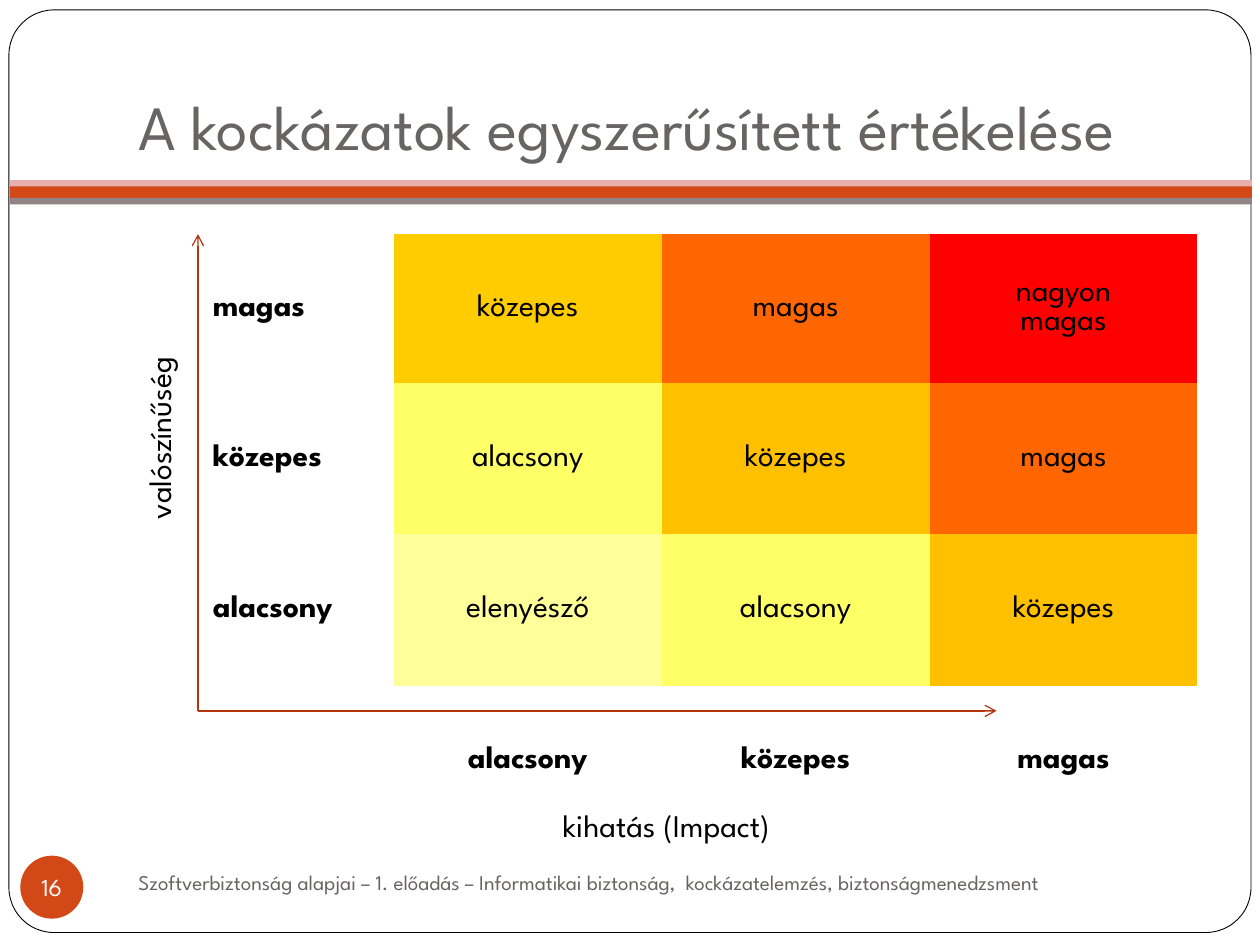
from pptx import Presentation
from pptx.dml.color import RGBColor
from pptx.enum.shapes import MSO_CONNECTOR, MSO_SHAPE as Shape
from pptx.enum.text import MSO_ANCHOR as Anchor, PP_ALIGN as Align
from pptx.oxml.ns import qn
from pptx.util import Cm, Pt
from lxml import etree

BLACK = RGBColor(0x00, 0x00, 0x00)
WHITE = RGBColor(0xFF, 0xFF, 0xFF)
GREY = RGBColor(0x69, 0x64, 0x64)
ORANGE = RGBColor(0xD3, 0x48, 0x17)
PINK = RGBColor(0xE6, 0xB1, 0xAC)
MAUVE = RGBColor(0x91, 0x84, 0x85)
RUST = RGBColor(0xB1, 0x36, 0x0B)
PALE = RGBColor(0xFF, 0xFF, 0x99)
YELLOW = RGBColor(0xFF, 0xFF, 0x66)
GOLD = RGBColor(0xFF, 0xCC, 0x00)
AMBER = RGBColor(0xFF, 0xC0, 0x00)
DEEP = RGBColor(0xFF, 0x66, 0x00)
RED = RGBColor(0xFF, 0x00, 0x00)

NO_GRID_STYLE = "{2D5ABB26-0587-4C30-8999-92F81FD0307C}"

# Each cell: text, fill; the first column and the last row hold the labels
RISKS = [
    [("magas", None), ("közepes", GOLD), ("magas", DEEP), ("nagyon\nmagas", RED)],
    [("közepes", None), ("alacsony", YELLOW), ("közepes", AMBER), ("magas", DEEP)],
    [("alacsony", None), ("elenyésző", PALE), ("alacsony", YELLOW), ("közepes", AMBER)],
    [("", WHITE), ("alacsony", WHITE), ("közepes", WHITE), ("magas", WHITE)],
]


class RiskSlide:
    font = "League Spartan"

    def __init__(self, deck):
        self.page = deck.slides.add_slide(deck.slide_layouts[5])

    def add_lines(self, frame, text, size=18, color=BLACK, bold=False, align=Align.LEFT):
        for index, line in enumerate(text.split("\n")):
            para = frame.paragraphs[0] if index == 0 else frame.add_paragraph()
            para.alignment = align
            span = para.add_run()
            span.text = line
            span.font.name = self.font
            span.font.size = Pt(size)
            span.font.bold = bold
            span.font.color.rgb = color

    def shape(self, kind, left, top, width, height, fill, line=None):
        shape = self.page.shapes.add_shape(kind, Cm(left), Cm(top), Cm(width), Cm(height))
        shape.shadow.inherit = False
        shape.fill.solid()
        shape.fill.fore_color.rgb = fill
        if line is None:
            shape.line.fill.background()
        else:
            shape.line.color.rgb = line
            shape.line.width = Pt(0.5)
        return shape

    def title(self, text, left, top, width, height):
        title = self.page.shapes.title
        title.left, title.top, title.width, title.height = map(Cm, (left, top, width, height))
        frame = title.text_frame
        frame.vertical_anchor = Anchor.BOTTOM
        frame.margin_bottom = Cm(0.25)
        self.add_lines(frame, text, 36, GREY)
        self.page.shapes._spTree.append(title._element)  # in front of the frame

    def badge(self, text, left, top, size):
        frame = self.shape(Shape.OVAL, left, top, size, size, ORANGE).text_frame
        frame.margin_left = frame.margin_right = frame.margin_top = frame.margin_bottom = 0
        frame.word_wrap = False
        frame.vertical_anchor = Anchor.MIDDLE
        self.add_lines(frame, text, 14, WHITE, align=Align.CENTER)

    def text(self, text, left, top, width, height, size=18, color=BLACK,
             anchor=Anchor.TOP, upward=False):
        box = self.page.shapes.add_textbox(Cm(left), Cm(top), Cm(width), Cm(height))
        frame = box.text_frame
        frame.word_wrap = True
        frame.vertical_anchor = anchor
        if upward:
            frame._txBody.bodyPr.set("vert", "vert270")
        self.add_lines(frame, text, size, color)

    def matrix(self, rows, left, top, column_width, heights):
        columns = len(rows[0])
        table = self.page.shapes.add_table(
            len(rows), columns, Cm(left), Cm(top),
            Cm(column_width * columns), Cm(sum(heights))).table
        table.first_row = table.horz_banding = False
        table._tbl.tblPr.find(qn("a:tableStyleId")).text = NO_GRID_STYLE
        for column in table.columns:
            column.width = Cm(column_width)
        for r, (row, height) in enumerate(zip(rows, heights)):
            table.rows[r].height = Cm(height)
            for c, (text, fill) in enumerate(row):
                self.cell(table.cell(r, c), text, fill, c == 0, r == len(rows) - 1)

    def cell(self, cell, text, fill, row_label, column_label):
        if fill is None:
            cell.fill.background()
        else:
            cell.fill.solid()
            cell.fill.fore_color.rgb = fill
        cell.vertical_anchor = Anchor.MIDDLE
        cell.margin_left = Cm(1.75 if row_label else 0.36)
        cell.margin_right = Cm(0.36)
        if text:
            self.add_lines(cell.text_frame, text, bold=row_label or column_label,
                           align=Align.LEFT if row_label else Align.CENTER)

    def arrow(self, x1, y1, x2, y2):
        arrow = self.page.shapes.add_connector(
            MSO_CONNECTOR.STRAIGHT, Cm(x1), Cm(y1), Cm(x2), Cm(y2))
        arrow.line.color.rgb = RUST
        arrow.line.width = Pt(0.75)
        etree.SubElement(arrow.line._get_or_add_ln(), qn("a:tailEnd"), type="arrow")
        etree.SubElement(arrow._element.spPr, qn("a:effectLst"))


def main():
    deck = Presentation()
    deck.slide_width, deck.slide_height = Cm(25.4), Cm(19.05)
    slide = RiskSlide(deck)

    # Rounded frame and the three stripes under the title
    frame = slide.shape(Shape.ROUNDED_RECTANGLE, 0.18, 0.2, 25.04, 18.6, WHITE, BLACK)
    frame.adjustments[0] = 0.049
    for top, height, color in [(3.73, 0.26, ORANGE), (3.63, 0.13, PINK), (3.99, 0.13, MAUVE)]:
        slide.shape(Shape.RECTANGLE, 0.2, top, 25.04, height, color)

    # Title and page number
    slide.title("A kockázatok egyszerűsített értékelése", 2.54, 0.76, 21.59, 2.77)
    slide.badge("16", 0.41, 17.25, 1.27)

    # Risk matrix
    slide.matrix(RISKS, 2.54, 4.72, 5.4, [3.0, 3.05, 3.05, 3.05])

    # Footer and axis names
    slide.text("Szoftverbiztonság alapjai – 1. előadás – Informatikai biztonság,  "
               "kockázatelemzés, biztonságmenedzsment",
               2.54, 17.15, 21.56, 1.27, 12, GREY, Anchor.MIDDLE)
    slide.text("valószínűség", 2.69, 6.53, 1.27, 4.19, upward=True)
    slide.text("kihatás (Impact)", 11.1, 16.13, 6.45, 1.02)

    # Axes from a common origin
    origin = (3.99, 14.33)
    slide.arrow(*origin, 3.99, 4.72)
    slide.arrow(*origin, 20.09, 14.33)

    deck.save("out.pptx")


if __name__ == "__main__":
    main()
